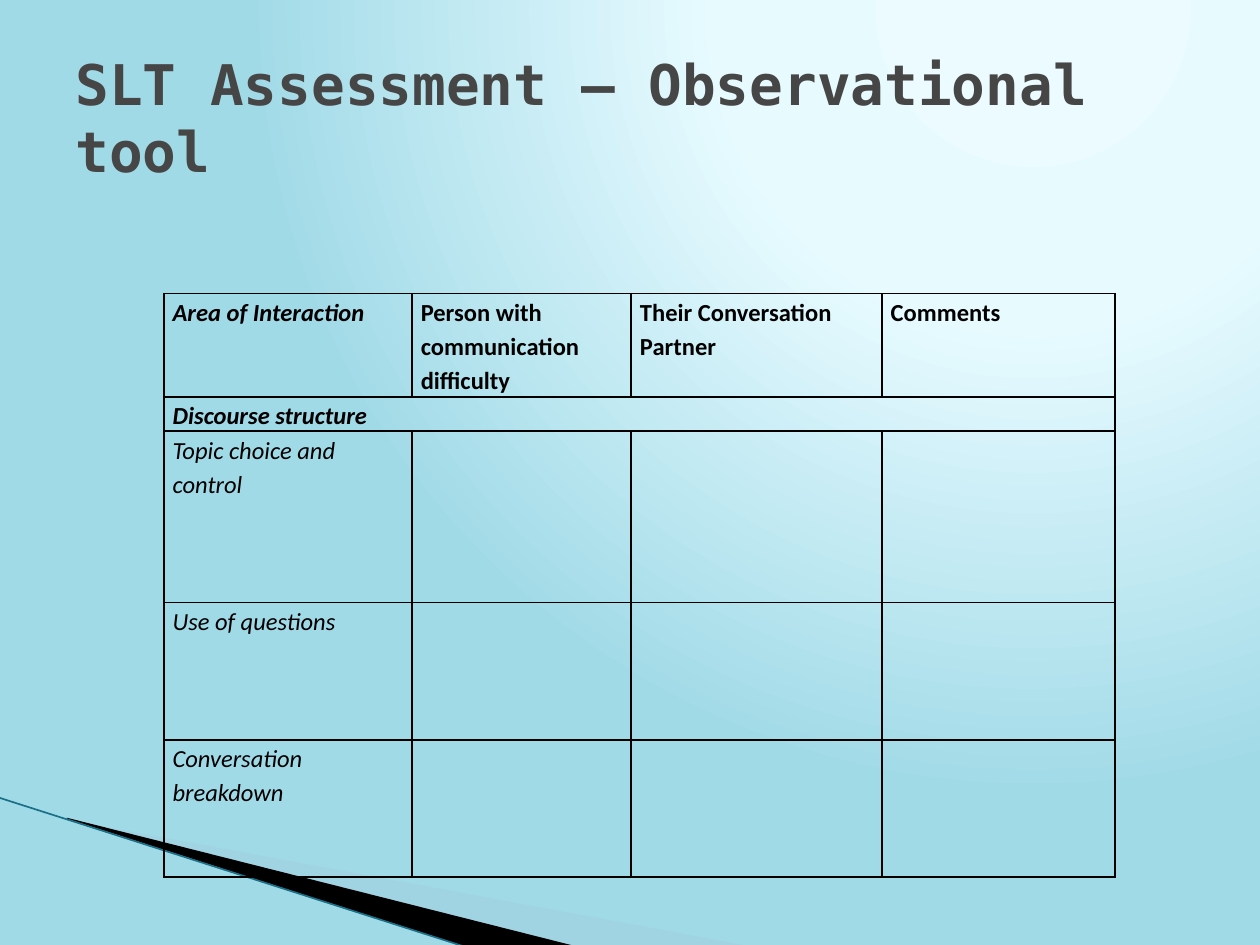
from dataclasses import dataclass

from lxml import etree
from pptx import Presentation
from pptx.dml.color import RGBColor
from pptx.enum.shapes import MSO_CONNECTOR
from pptx.enum.text import MSO_ANCHOR
from pptx.oxml import parse_xml
from pptx.oxml.ns import nsdecls, qn
from pptx.util import Inches, Pt

LINE = MSO_CONNECTOR.STRAIGHT
MIDDLE = MSO_ANCHOR.MIDDLE
WIDE, HIGH = Inches(10), Inches(7.5)
BLACK = "000000"


@dataclass
class Wedge:
    points: list[tuple[float, float]]
    tint: str
    alpha: int = 100


@dataclass
class Label:
    text: str
    bold: bool = False
    slant: bool = False


WEDGES = [
    Wedge([(5.5, 86.8), (59.5, 100.13), (45.6, 100.13), (5.5, 86.67)], "A0CBDC", 40),
    Wedge([(5.3, 86.53), (45.7, 100.13), (37.2, 100.27), (5.4, 86.67)], BLACK),
]
COLS = [19.7, 17.4, 19.9, 18.5]
ROWS = [10.93, 3.6, 18.13, 14.53, 14.53]
GRID = [
    [
        Label("Area of Interaction", True, True),
        Label("Person with communication difficulty", True),
        Label("Their Conversation Partner", True),
        Label("Comments", True),
    ],
    [Label("Discourse structure", True, True)],
    [Label("Topic choice and control", slant=True)],
    [Label("Use of questions", slant=True)],
    [Label("Conversation breakdown", slant=True)],
]
STOPS = [(0, "EBFBFF"), (40, "E7FBFF"), (100, "A1DAE7")]


def across(share: float) -> int:
    return round(WIDE * share / 100)


def down(share: float) -> int:
    return round(HIGH * share / 100)


def color(code: str) -> RGBColor:
    return RGBColor.from_string(code)


def paint_back(slide) -> None:
    slide.background.fill.gradient()
    old = next(slide.element.iter(qn("a:gradFill")))
    stops = "".join(
        f'<a:gs pos="{spot * 1000}"><a:srgbClr val="{code}"/></a:gs>'
        for spot, code in STOPS
    )
    new = parse_xml(
        f'<a:gradFill {nsdecls("a")} rotWithShape="1"><a:gsLst>{stops}</a:gsLst>'
        '<a:path path="circle"><a:fillToRect l="65000" t="0" r="0" b="98000"/>'
        "</a:path></a:gradFill>"
    )
    old.getparent().replace(old, new)


def draw_wedge(slide, wedge: Wedge) -> None:
    spots = [(across(x), down(y)) for x, y in wedge.points]
    pen = slide.shapes.build_freeform(*spots[0])
    pen.add_line_segments(spots[1:])
    shape = pen.convert_to_shape()
    shape.shadow.inherit = False
    shape.fill.solid()
    shape.fill.fore_color.rgb = color(wedge.tint)
    shape.line.fill.background()
    if wedge.alpha < 100:
        tint = next(shape.element.spPr.iter(qn("a:srgbClr")))
        etree.SubElement(tint, qn("a:alpha"), val=str(wedge.alpha * 1000))


def draw_edge(slide) -> None:
    edge = slide.shapes.add_connector(
        LINE, across(-0.1), down(84.4), across(37.1), down(100.27)
    )
    edge.line.color.rgb = color("1A7187")
    edge.line.width = Pt(0.95)
    etree.SubElement(edge.element.spPr, qn("a:effectLst"))


def add_run(para, label: Label, font: str, size: int, code: str) -> None:
    run = para.add_run()
    run.text = label.text
    run.font.name = font
    run.font.size = Pt(size)
    run.font.bold = label.bold
    run.font.italic = label.slant
    run.font.color.rgb = color(code)


def style_cell(cell) -> None:
    cell.margin_left = cell.margin_right = Inches(0.07)
    cell.margin_top = cell.margin_bottom = 0
    cell.fill.background()
    props = cell._tc.get_or_add_tcPr()
    for spot, side in enumerate(("lnL", "lnR", "lnT", "lnB")):
        border = parse_xml(
            f'<a:{side} {nsdecls("a")} w="{Pt(1)}"><a:solidFill>'
            f'<a:srgbClr val="{BLACK}"/></a:solidFill></a:{side}>'
        )
        props.insert(spot, border)


def draw_table(slide) -> None:
    frame = slide.shapes.add_table(
        len(ROWS), len(COLS), across(13), down(31.07),
        across(sum(COLS)), down(sum(ROWS)),
    )
    table = frame.table
    table.first_row = table.horz_banding = False
    for col, share in zip(table.columns, COLS):
        col.width = across(share)
    for row, share in zip(table.rows, ROWS):
        row.height = down(share)
    for cell in table.iter_cells():
        style_cell(cell)
    table.cell(1, 0).merge(table.cell(1, len(COLS) - 1))
    for row, labels in enumerate(GRID):
        for col, label in enumerate(labels):
            para = table.cell(row, col).text_frame.paragraphs[0]
            para.line_spacing = 1.15
            add_run(para, label, "Calibri", 14, BLACK)


def draw_title(slide) -> None:
    box = slide.shapes.add_textbox(across(5), down(4), across(90), down(16.67))
    frame = box.text_frame
    frame.word_wrap = True
    frame.vertical_anchor = MIDDLE
    label = Label("SLT Assessment – Observational tool", True)
    add_run(frame.paragraphs[0], label, "DejaVu Sans Mono", 32, "464646")


def main() -> None:
    deck = Presentation()
    deck.slide_width, deck.slide_height = WIDE, HIGH
    slide = deck.slides.add_slide(deck.slide_layouts[6])
    paint_back(slide)
    for wedge in WEDGES:
        draw_wedge(slide, wedge)
    draw_edge(slide)
    draw_table(slide)
    draw_title(slide)
    deck.save("out.pptx")


if __name__ == "__main__":
    main()
